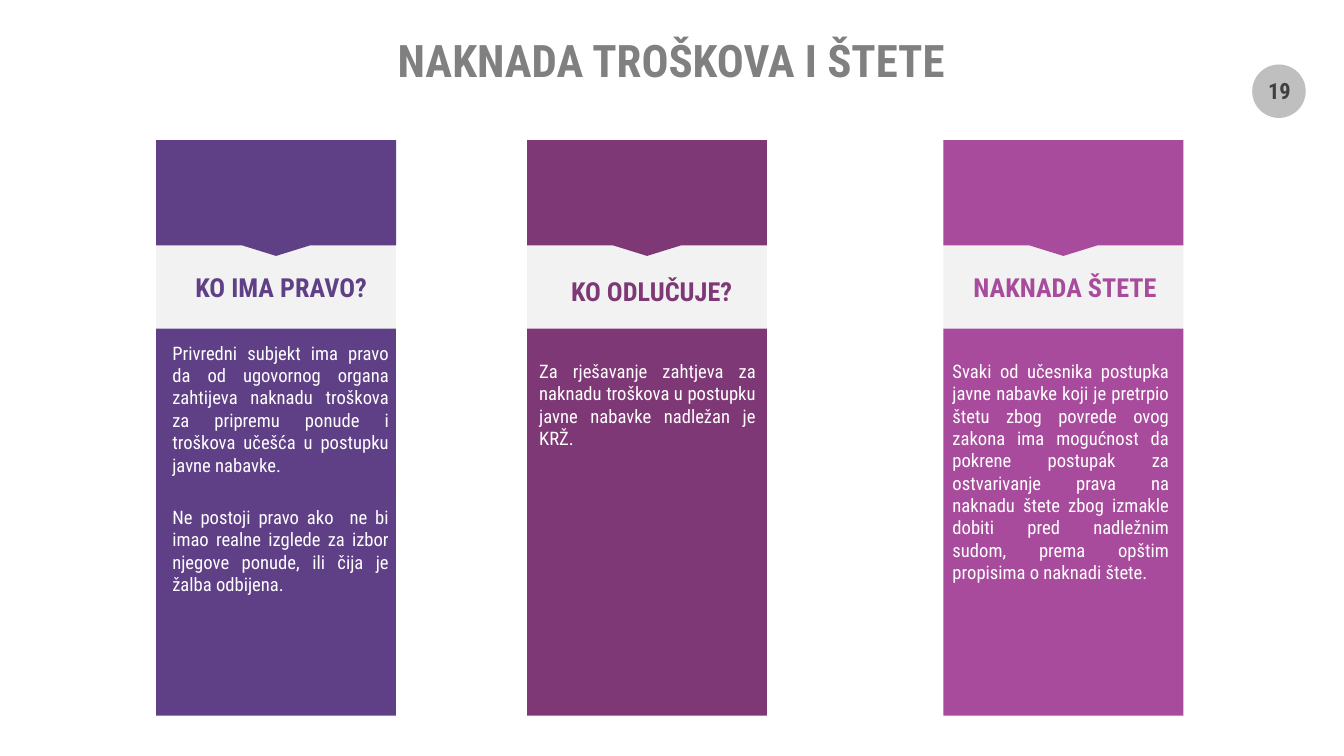
import pptx
import pptx.util
from pptx.dml.color import RGBColor
from pptx.enum.shapes import MSO_SHAPE
from pptx.enum.text import MSO_ANCHOR, MSO_AUTO_SIZE, PP_ALIGN

WHITE = RGBColor(0xFF, 0xFF, 0xFF)
PALE_GREY = RGBColor(0xF2, 0xF2, 0xF2)
BADGE_GREY = RGBColor(0xBF, 0xBF, 0xBF)
TITLE_GREY = RGBColor(0x80, 0x80, 0x80)
DARK_GREY = RGBColor(0x40, 0x40, 0x40)
VIOLET = RGBColor(0x5F, 0x3F, 0x85)
PLUM = RGBColor(0x7E, 0x38, 0x75)
ORCHID = RGBColor(0xA8, 0x4B, 0x9C)

FONT = "Roboto Condensed"
GRID = 100  # columns across and rows down the slide

# Shared rows and width of the three panels
PANEL_WIDTH = 17.85
PANEL_TOP, PANEL_HEAD = 18.53, 24.93
CALLOUT_HEIGHT = 15.33
BODY_TOP, BODY_HEIGHT = 43.47, 51.2
TEXT_WIDTH = 16.13
CALLOUT_ADJUSTMENTS = (0.5, 0.29, 0.09, 0.91)

# left, colour, heading, heading box (offset, top, width),
# body text box (offset, top, height), paragraphs
PANELS = [
    (11.62, VIOLET, "KO IMA PRAVO?", (0.75, 35.2, 17.1), (1.2, 45.2, 37.07), [
        "Privredni subjekt ima pravo da od ugovornog organa zahtijeva naknadu "
        "troškova za pripremu ponude i troškova učešća u postupku javne nabavke.",
        "Ne postoji pravo ako  ne bi imao realne izglede za izbor njegove "
        "ponude, ili čija je žalba odbijena."]),
    (39.22, PLUM, "KO ODLUČUJE?", (0.75, 35.73, 17.03), (0.9, 47.6, 12), [
        "Za rješavanje zahtjeva za naknadu troškova u postupku javne nabavke "
        "nadležan je KRŽ."]),
    (70.2, ORCHID, "NAKNADA ŠTETE", (-0.07, 35.2, 18.23), (0.67, 47.6, 32.93), [
        "Svaki od učesnika postupka javne nabavke koji je pretrpio štetu zbog "
        "povrede ovog zakona ima mogućnost da pokrene postupak za ostvarivanje "
        "prava na naknadu štete zbog izmakle dobiti pred nadležnim sudom, prema "
        "opštim propisima o naknadi štete."]),
]


class SlideBuilder:
    def __init__(self, deck):
        self.column = deck.slide_width / GRID
        self.row = deck.slide_height / GRID
        self.slide = deck.slides.add_slide(deck.slide_layouts[5])

    def place(self, left, top, width, height):
        return (round(left * self.column), round(top * self.row),
                round(width * self.column), round(height * self.row))

    def fill_text(self, frame, paragraphs, size, colour, bold=False,
                  align=PP_ALIGN.CENTER, anchor=MSO_ANCHOR.TOP, inset=0, gap=0):
        frame.text = "\n".join(paragraphs)
        frame.word_wrap = True
        frame.auto_size = MSO_AUTO_SIZE.NONE
        frame.vertical_anchor = anchor
        frame.margin_left = frame.margin_right = pptx.util.Inches(inset)
        frame.margin_top = frame.margin_bottom = pptx.util.Inches(inset / 2)
        for index, paragraph in enumerate(frame.paragraphs):
            paragraph.alignment = align
            paragraph.space_before = pptx.util.Pt(gap if index else 0)
            for run in paragraph.runs:
                run.font.name = FONT
                run.font.size = pptx.util.Pt(size)
                run.font.bold = bold
                run.font.color.rgb = colour

    def title(self, box, text):
        heading = self.slide.shapes.title
        heading.left, heading.top, heading.width, heading.height = self.place(*box)
        self.fill_text(heading.text_frame, [text], 32, TITLE_GREY, bold=True,
                       anchor=MSO_ANCHOR.MIDDLE)

    def text(self, box, paragraphs, size, colour, **style):
        label = self.slide.shapes.add_textbox(*self.place(*box))
        self.fill_text(label.text_frame, paragraphs, size, colour, **style)

    def shape(self, kind, box, colour, adjustments=(), group=None):
        parent = group or self.slide
        block = parent.shapes.add_shape(kind, *self.place(*box))
        block.shadow.inherit = False
        block.fill.solid()
        block.fill.fore_color.rgb = colour
        block.line.fill.background()
        for index, value in enumerate(adjustments):
            block.adjustments[index] = value

    def panel(self, left, colour, heading, heading_box, body_box, paragraphs):
        # Coloured blocks
        group = self.slide.shapes.add_group_shape()
        self.shape(MSO_SHAPE.RECTANGLE, (left, PANEL_TOP, PANEL_WIDTH, PANEL_HEAD),
                   PALE_GREY, group=group)
        self.shape(MSO_SHAPE.DOWN_ARROW_CALLOUT,
                   (left, PANEL_TOP, PANEL_WIDTH, CALLOUT_HEIGHT),
                   colour, CALLOUT_ADJUSTMENTS, group)
        self.shape(MSO_SHAPE.RECTANGLE, (left, BODY_TOP, PANEL_WIDTH, BODY_HEIGHT),
                   colour, group=group)
        # Body text
        offset, top, height = body_box
        self.text((left + offset, top, TEXT_WIDTH, height), paragraphs, 13.3,
                  WHITE, align=PP_ALIGN.JUSTIFY, gap=21.5)
        # Heading
        offset, top, width = heading_box
        self.text((left + offset, top, width, 5.6), [heading], 18.7, colour,
                  bold=True, inset=0.1)


def main():
    deck = pptx.Presentation()
    deck.slide_width = pptx.util.Inches(13.33)
    deck.slide_height = pptx.util.Inches(7.5)
    builder = SlideBuilder(deck)

    # Page number badge
    builder.shape(MSO_SHAPE.OVAL, (93.17, 8.53, 3.98, 7.07), BADGE_GREY)
    builder.text((92.87, 8.8, 4.65, 6.4), ["19"], 16, DARK_GREY, bold=True,
                 anchor=MSO_ANCHOR.MIDDLE, inset=0.13)

    # Title
    builder.title((23.93, 3.87, 52.06, 8.13), "NAKNADA TROŠKOVA I ŠTETE")

    # Three panels
    for panel in PANELS:
        builder.panel(*panel)

    deck.save("out.pptx")


if __name__ == "__main__":
    main()
